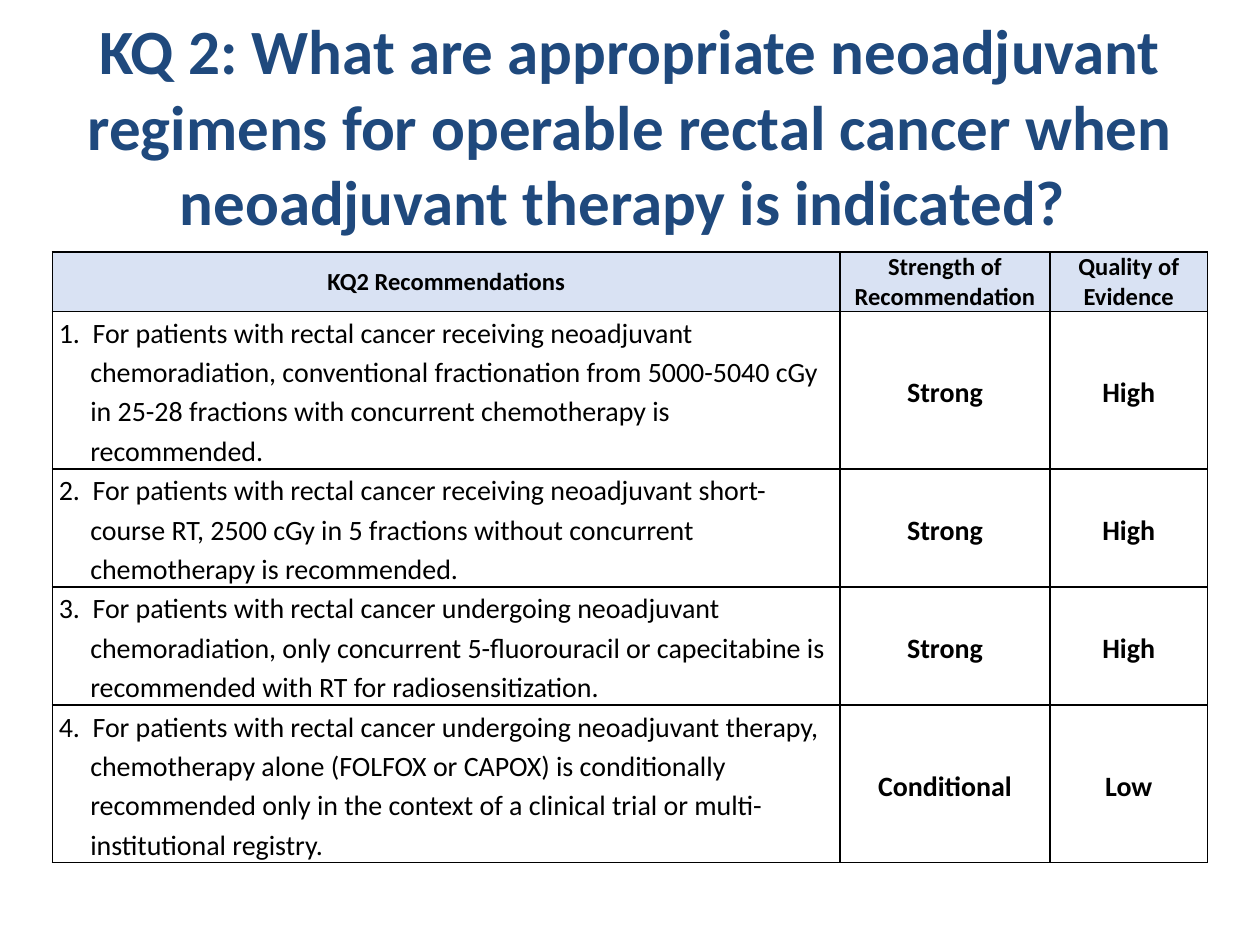
"""Build the slide of neoadjuvant regimen recommendations."""
from lxml import etree
from pptx import Presentation
from pptx.dml.color import RGBColor
from pptx.enum.text import MSO_ANCHOR, PP_ALIGN
from pptx.oxml.ns import qn
from pptx.util import Pt

MID, TOP = MSO_ANCHOR.MIDDLE, MSO_ANCHOR.TOP
CENTER, LEFT = PP_ALIGN.CENTER, PP_ALIGN.LEFT
NAVY = RGBColor(0x1F, 0x49, 0x7D)
PALE = RGBColor(0xD9, 0xE2, 0xF3)
WHITE = RGBColor(0xFF, 0xFF, 0xFF)
BLACK = RGBColor(0, 0, 0)
FONT = "Calibri"

TITLE = ("KQ 2: What are appropriate neoadjuvant regimens for operable "
         "rectal cancer when neoadjuvant therapy is indicated? ")
ROWS = [
    ("KQ2 Recommendations", "Strength of Recommendation",
     "Quality of Evidence"),
    ("1.  For patients with rectal cancer receiving neoadjuvant "
     "chemoradiation, conventional fractionation from 5000-5040 cGy in "
     "25-28 fractions with concurrent chemotherapy is recommended.",
     "Strong", "High"),
    ("2.  For patients with rectal cancer receiving neoadjuvant "
     "short-course RT, 2500 cGy in 5 fractions without concurrent "
     "chemotherapy is recommended.", "Strong", "High"),
    ("3.  For patients with rectal cancer undergoing neoadjuvant "
     "chemoradiation, only concurrent 5-fluorouracil or capecitabine is "
     "recommended with RT for radiosensitization.", "Strong", "High"),
    ("4.  For patients with rectal cancer undergoing neoadjuvant therapy, "
     "chemotherapy alone (FOLFOX or CAPOX) is conditionally recommended "
     "only in the context of a clinical trial or multi-institutional "
     "registry.", "Conditional", "Low"),
]
WIDTHS = (450, 120, 90)
HEIGHTS = (34, 90, 67.5, 67.5, 90)


def write(para, text, size, color, bold, align):
    para.alignment = align
    run = para.add_run()
    run.text = text
    font = run.font
    font.name, font.size, font.bold = FONT, Pt(size), bold
    font.color.rgb = color


def border(cell):
    props = cell._tc.get_or_add_tcPr()
    for spot, side in enumerate(("lnL", "lnR", "lnT", "lnB")):
        line = etree.Element(qn("a:" + side), w=str(Pt(1)))
        fill = etree.SubElement(line, qn("a:solidFill"))
        etree.SubElement(fill, qn("a:srgbClr"), val=str(BLACK))
        props.insert(spot, line)


def fill_cell(cell, text, head, lead):
    cell.margin_left = cell.margin_right = Pt(3.6)
    cell.margin_top = cell.margin_bottom = Pt(0)
    cell.vertical_anchor = TOP if lead else MID
    cell.fill.solid()
    cell.fill.fore_color.rgb = PALE if head else WHITE
    para = cell.text_frame.paragraphs[0]
    write(para, text, 14 if head else 16, BLACK, not lead,
          LEFT if lead else CENTER)
    if not head:
        para.line_spacing = 1.15
    if lead:
        props = para._p.get_or_add_pPr()
        props.set("marL", str(Pt(18)))
        props.set("indent", str(Pt(-18)))
    border(cell)


def main():
    deck = Presentation()
    deck.slide_width, deck.slide_height = Pt(720), Pt(540)
    slide = deck.slides.add_slide(deck.slide_layouts[6])

    frame = slide.shapes.add_textbox(
        Pt(36), Pt(3), Pt(648), Pt(90)).text_frame
    frame.word_wrap = True
    frame.vertical_anchor = TOP
    write(frame.paragraphs[0], TITLE, 36, NAVY, True, CENTER)

    table = slide.shapes.add_table(
        len(ROWS), len(WIDTHS), Pt(30), Pt(144),
        Pt(sum(WIDTHS)), Pt(sum(HEIGHTS))).table
    table.first_row = table.horz_banding = False
    for col, width in zip(table.columns, WIDTHS):
        col.width = Pt(width)
    for row, height in zip(table.rows, HEIGHTS):
        row.height = Pt(height)
    for r, texts in enumerate(ROWS):
        for c, text in enumerate(texts):
            fill_cell(table.cell(r, c), text, r == 0, r > 0 and c == 0)

    deck.save("out.pptx")


if __name__ == "__main__":
    main()
